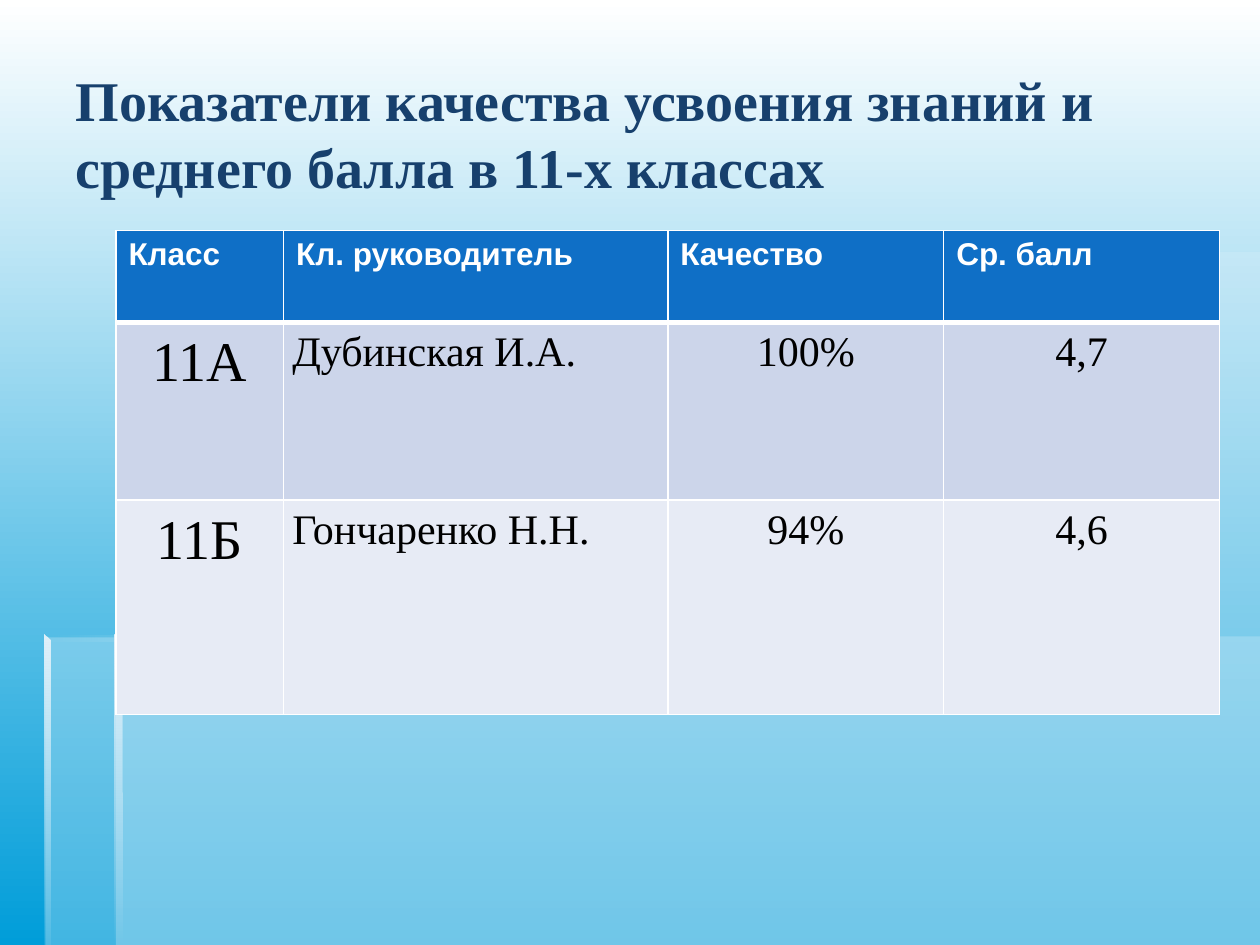
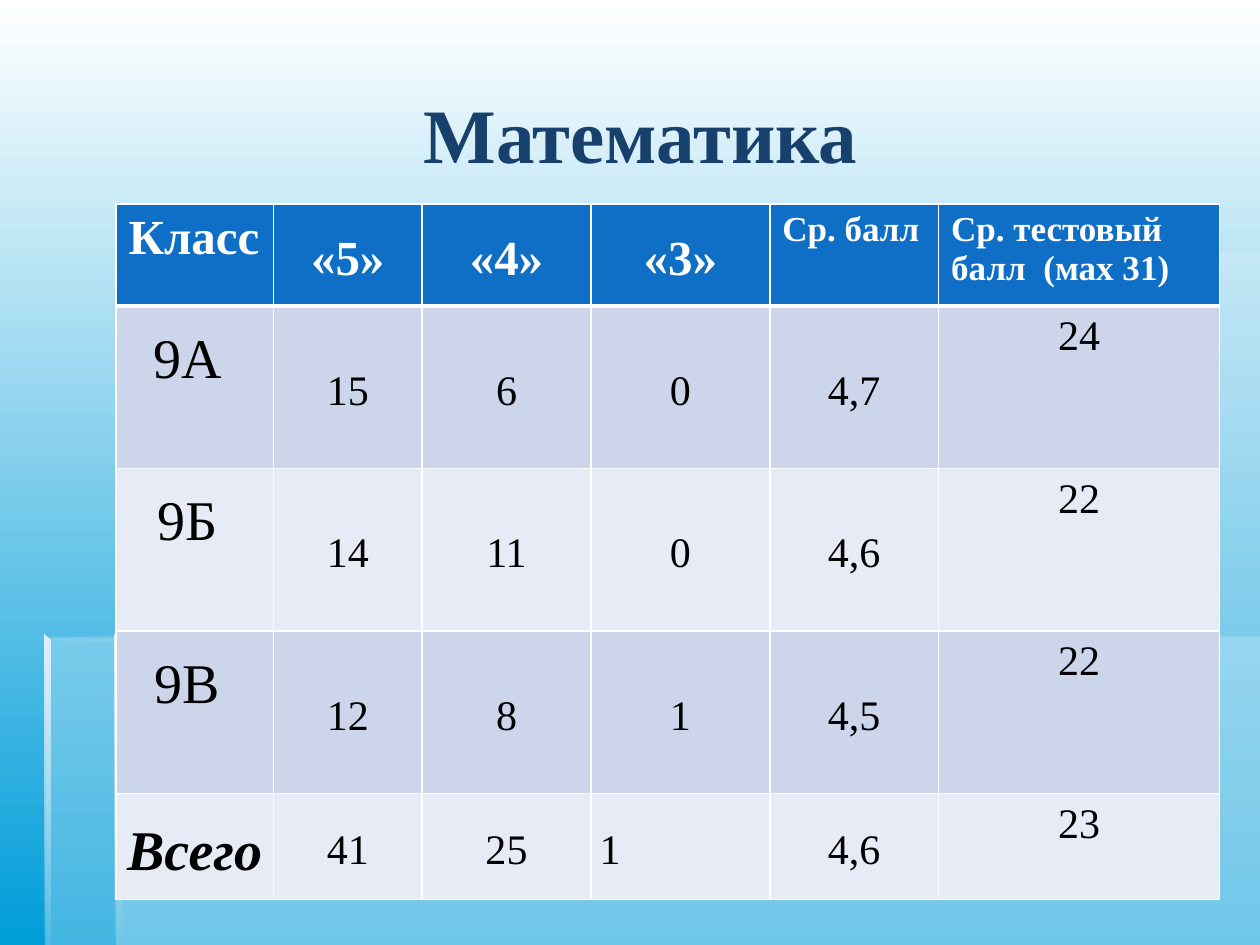
import dataclasses
import pptx
import pptx.util
import pptx.dml.color
import pptx.enum.text
import pptx.oxml
import pptx.oxml.ns
from lxml import etree

Align = pptx.enum.text.PP_ALIGN
Anchor = pptx.enum.text.MSO_ANCHOR
Pt = pptx.util.Pt
qn = pptx.oxml.ns.qn


@dataclasses.dataclass(frozen=True)
class Theme:
    serif: str = "Times New Roman"
    sans: str = "Arial"
    title: str = "17406D"
    head: str = "0F6FC6"
    bands: tuple = ("CCD5EA", "E7EBF5")
    white: str = "FFFFFF"
    black: str = "000000"
    sky: str = "009DD9"
    glass: str = "DBEFF9"
    shine: str = "E0F1FA"
    shade: str = "C9DBE4"
    huge: int = 44
    big: int = 32
    wide: int = 28
    mid: int = 24
    small: int = 20
    tiny: int = 18


@dataclasses.dataclass(frozen=True)
class Style:
    size: int
    align: Align = Align.CENTER
    anchor: Anchor = Anchor.TOP
    font: str = Theme.serif
    color: str = Theme.black
    bold: bool = False
    italic: bool = False
    tight: bool = True
    foot: float = 0
    hang: float = 0


T = Theme()
deck = pptx.Presentation()
deck.slide_width = pptx.util.Inches(10)
deck.slide_height = pptx.util.Inches(7.5)
UNIT = deck.slide_width // 10  # ten columns across, seven and a half rows down
LEFT = 0.92


def grid(n):
    """Turn grid units into a length."""
    return pptx.util.Emu(round(n * UNIT))


def tint(fill, colors, angle):
    """Fill with one colour, or with a gradient of two."""
    if len(colors) == 1:
        fill.solid()
        fill.fore_color.rgb = pptx.dml.color.RGBColor.from_string(colors[0])
        return
    fill.gradient()
    fill.gradient_angle = angle
    for stop, color in zip(fill.gradient_stops, colors):
        stop.color.rgb = pptx.dml.color.RGBColor.from_string(color)


# Shared backdrop, kept on the layout
DOWN = 270
layout = deck.slide_layouts[5]
tint(layout.background.fill, (T.white, T.sky), DOWN)
panes = [
    ([(0.92, 5.05), (0.92, 7.5), (10, 7.5), (10, 5.05)], (T.glass,), (30,), 0),
    ([(0.94, 5.06), (0.36, 5.06), (0.36, 7.5), (10, 7.5), (10, 2), (0.94, 2)],
     (T.glass,), (30,), 0),
    ([(0.92, 2), (0.92, 2.05), (8.91, 2.05), (8.91, 2)],
     (T.glass, T.shade), (0, 100), 0),
    ([(0.92, 2), (0.92, 5.1), (0.97, 5.1), (0.96, 2.04)],
     (T.shine, T.glass), (100, 100), DOWN),
    ([(0.91, 7.5), (0.97, 7.5), (0.96, 5.08), (0.91, 5.04)],
     (T.shine, T.glass), (100, 0), DOWN),
    ([(0.35, 5.04), (0.35, 5.09), (5.35, 5.09), (5.35, 5.04)],
     (T.glass, T.shade), (0, 100), 0),
    ([(0.35, 5.04), (0.35, 7.5), (0.4, 7.5), (0.4, 5.09)],
     (T.shine, T.glass), (100, 10), DOWN),
]

# Cell styles
head = Style(T.tiny, Align.LEFT, font=T.sans, color=T.white, bold=True, tight=False)
name = dataclasses.replace(head, size=T.wide, font=T.serif)
mean = dataclasses.replace(name, size=T.small)
mark = dataclasses.replace(name, align=Align.CENTER, anchor=Anchor.MIDDLE, tight=True)
group = Style(T.big)
tutor = Style(T.mid, Align.JUSTIFY)
score = Style(T.mid)
count = Style(T.mid, anchor=Anchor.MIDDLE)
lone = dataclasses.replace(count, align=Align.LEFT)
form = Style(T.big, anchor=Anchor.MIDDLE, foot=0.52)
total = Style(T.big, anchor=Anchor.MIDDLE, bold=True, italic=True, hang=-0.12)

quality = [group, tutor, score, score]
marks = [form] + [count] * 4 + [score]
pages = [
    ("Показатели качества усвоения знаний и среднего балла в 11-х классах",
     T.big, Align.LEFT, 1.83, [1.33, 3.05, 2.19, 2.19], [
         (0.73, [head] * 4, ["Класс", "Кл. руководитель", "Качество", "Ср. балл"]),
         (1.41, quality, ["11А", "Дубинская И.А.", "100%", "4,7"]),
         (1.7, quality, ["11Б", "Гончаренко Н.Н.", "94%", "4,6"]),
     ]),
    ("Математика", T.huge, Align.CENTER, 1.62,
     [1.25, 1.18, 1.34, 1.42, 1.34, 2.23], [
         (0.81, [name, mark, mark, mark, mean, mean],
          ["Класс", "«5»", "«4»", "«3»", "Ср. балл", "Ср. тестовый балл  (маx 31)"]),
         (1.29, marks, ["9А ", "15", "6", "0", "4,7", "24"]),
         (1.29, marks, ["9Б ", "14", "11", "0", "4,6", "22"]),
         (1.29, marks, ["9В ", "12", "8", "1", "4,5", "22"]),
         (0.84, [total, count, count, lone, count, score],
          ["Всего ", "41", "25", "1", "4,6", "23"]),
     ]),
]

for page, (text, size, align, top, cols, rows) in enumerate(pages):
    slide = deck.slides.add_slide(layout)

    # Draw the panes once, then hand them to the layout
    for i, (spots, colors, alphas, angle) in enumerate(panes if page == 0 else []):
        spots = [(grid(x), grid(y)) for x, y in spots]
        pen = slide.shapes.build_freeform(*spots[0])
        pen.add_line_segments(spots[1:], close=True)
        pane = pen.convert_to_shape()
        pane.shadow.inherit = False
        pane.line.fill.background()
        tint(pane.fill, colors, angle)
        for node, alpha in zip(pane.element.iter(qn("a:srgbClr")), alphas):
            etree.SubElement(node, qn("a:alpha")).set("val", str(alpha * 1000))
        pane.element.nvSpPr.cNvPr.id = 20 + i
        layout.shapes.element.insert(2 + i, pane.element)

    # Title
    title = slide.shapes.title
    title.left, title.top = grid(0.5), grid(0.27)
    title.width, title.height = grid(9.17), grid(1.57)
    frame = title.text_frame
    frame.auto_size = pptx.enum.text.MSO_AUTO_SIZE.NONE
    frame.word_wrap = True
    frame.vertical_anchor = Anchor.MIDDLE
    para = frame.paragraphs[0]
    para.alignment = align
    run = para.add_run()
    run.text = text
    run.font.name, run.font.size, run.font.bold = T.serif, Pt(size), True
    run.font.color.rgb = pptx.dml.color.RGBColor.from_string(T.title)

    # Table
    table = slide.shapes.add_table(
        len(rows), len(cols), grid(LEFT), grid(top),
        grid(sum(cols)), grid(sum(row[0] for row in rows))).table
    table.horz_banding = False
    for col, width in zip(table.columns, cols):
        col.width = grid(width)
    for r, (height, styles, words) in enumerate(rows):
        table.rows[r].height = grid(height)
        for c, (style, word) in enumerate(zip(styles, words)):
            cell = table.cell(r, c)
            tint(cell.fill, (T.bands[(r - 1) % 2] if r else T.head,), 0)
            cell.vertical_anchor = style.anchor
            para = cell.text_frame.paragraphs[0]
            para.alignment = style.align
            if style.tight:
                cell.margin_left = cell.margin_right = grid(0.07)
                cell.margin_top, cell.margin_bottom = 0, grid(style.foot)
                para.line_spacing = 1.15
            if style.hang:
                props = para._p.get_or_add_pPr()
                props.set("marL", "0")
                props.set("indent", str(grid(style.hang)))
            run = para.add_run()
            run.text = word
            font = run.font
            font.name, font.size = style.font, Pt(style.size)
            font.bold, font.italic = style.bold, style.italic
            font.color.rgb = pptx.dml.color.RGBColor.from_string(style.color)

            # White rules, thicker under the header
            for i, side in enumerate("LRTB"):
                thick = (r, side) in ((0, "B"), (1, "T"))
                line = etree.Element(qn("a:ln" + side), w=str(Pt(3 if thick else 1)))
                fill = etree.SubElement(line, qn("a:solidFill"))
                etree.SubElement(fill, qn("a:srgbClr")).set("val", T.white)
                cell._tc.get_or_add_tcPr().insert(i, line)

deck.save("out.pptx")
